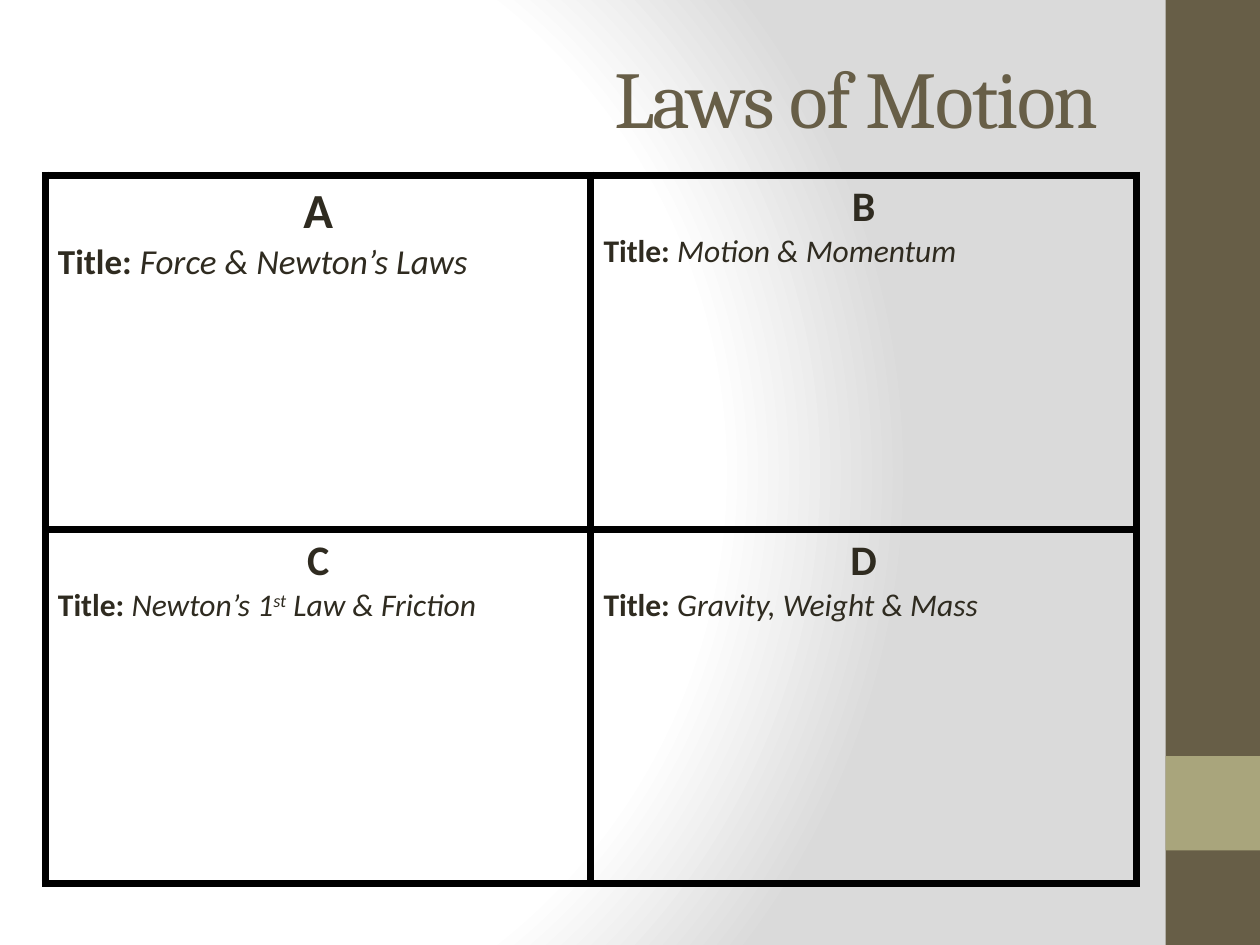
"""Build the Laws of Motion slide with its four-part grid."""
import pptx
import pptx.dml.color
import pptx.enum.shapes
import pptx.enum.text
import pptx.oxml
import pptx.oxml.ns
import pptx.util

Inches = pptx.util.Inches
Pt = pptx.util.Pt
Align = pptx.enum.text.PP_ALIGN
COLORS = {"bar": "675E47", "box": "A9A57C", "ink": "2F2B20", "edge": "000000",
          "white": "FFFFFF", "gray": "DADADA"}
HEAD = "Laws of Motion"
CELLS = [
    [("A", 28, 20, ["Force & Newton’s Laws"]), ("B", 24, 18, ["Motion & Momentum"])],
    [("C", 24, 18, ["Newton’s 1", "st", " Law & Friction"]),
     ("D", 24, 18, ["Gravity, Weight & Mass"])],
]
BARS = [("bar", 0, 7.5), ("box", 6, 0.75)]
STOPS = [(0, "white"), (75, "white"), (100, "gray")]
GRID = {"left": 0.36, "top": 1.39, "width": 8.66, "height": 5.62}
SPOT = {"left": 1.14, "top": 0.14, "width": 7.68, "height": 1.25}
EDGE = 4.5
NS = pptx.oxml.ns.nsdecls("a", "p")


def rgb(name):
    return pptx.dml.color.RGBColor.from_string(COLORS[name])


def style(font, color, **looks):
    font.color.rgb = rgb(color)
    for key, val in looks.items():
        setattr(font, key, val)


def paint(slide):
    stops = "".join(
        f'<a:gs pos="{pos * 1000}"><a:srgbClr val="{COLORS[name]}"/></a:gs>'
        for pos, name in STOPS)
    slide.element.cSld.insert(0, pptx.oxml.parse_xml(
        f'<p:bg {NS}><p:bgPr><a:gradFill rotWithShape="1"><a:gsLst>{stops}</a:gsLst>'
        '<a:path path="circle"><a:fillToRect l="20000" t="50000" r="100000" b="50000"/>'
        '</a:path></a:gradFill><a:effectLst/></p:bgPr></p:bg>'))


def add_bars(slide):
    for name, top, height in BARS:
        bar = slide.shapes.add_shape(
            pptx.enum.shapes.MSO_SHAPE.RECTANGLE,
            Inches(9.25), Inches(top), Inches(0.75), Inches(height))
        bar.shadow.inherit = False
        bar.fill.solid()
        bar.fill.fore_color.rgb = rgb(name)
        bar.line.fill.background()


def add_head(slide):
    title = slide.shapes.title
    for key, val in SPOT.items():
        setattr(title, key, Inches(val))
    frame = title.text_frame
    frame.text = HEAD
    frame.word_wrap = True
    frame.vertical_anchor = pptx.enum.text.MSO_ANCHOR.MIDDLE
    para = frame.paragraphs[0]
    para.alignment = Align.RIGHT
    run = para.runs[0]
    style(run.font, "bar", name="Cambria", size=Pt(46))
    run.font._element.set("spc", "-100")


def frame_cell(cell):
    props = cell._tc.get_or_add_tcPr()
    for pos, side in enumerate("LRTB"):
        props.insert(pos, pptx.oxml.parse_xml(
            f'<a:ln{side} {NS} w="{int(Pt(EDGE))}"><a:solidFill>'
            f'<a:srgbClr val="{COLORS["edge"]}"/></a:solidFill></a:ln{side}>'))


def fill_cell(cell, mark, big, small, parts):
    cell.fill.background()
    frame_cell(cell)
    top = cell.text_frame.paragraphs[0]
    top.alignment = Align.CENTER
    line = cell.text_frame.add_paragraph()
    line.alignment = Align.LEFT
    runs = [(top, mark, big, True), (line, "Title: ", small, True)]
    runs += [(line, part, small, False) for part in parts]
    for para, text, size, bold in runs:
        run = para.add_run()
        run.text = text
        style(run.font, "ink", name="Calibri", size=Pt(size), bold=bold, italic=not bold)
        if text == "st":
            run.font._element.set("baseline", "30000")


def add_grid(slide):
    place = {key: Inches(val) for key, val in GRID.items()}
    table = slide.shapes.add_table(len(CELLS), len(CELLS[0]), **place).table
    table.first_row = table.horz_banding = False
    for row, items in enumerate(CELLS):
        for col, item in enumerate(items):
            fill_cell(table.cell(row, col), *item)


def main():
    deck = pptx.Presentation()
    deck.slide_width, deck.slide_height = Inches(10), Inches(7.5)
    slide = deck.slides.add_slide(deck.slide_layouts[5])
    for step in (paint, add_bars, add_head, add_grid):
        step(slide)
    deck.save("out.pptx")


if __name__ == "__main__":
    main()
